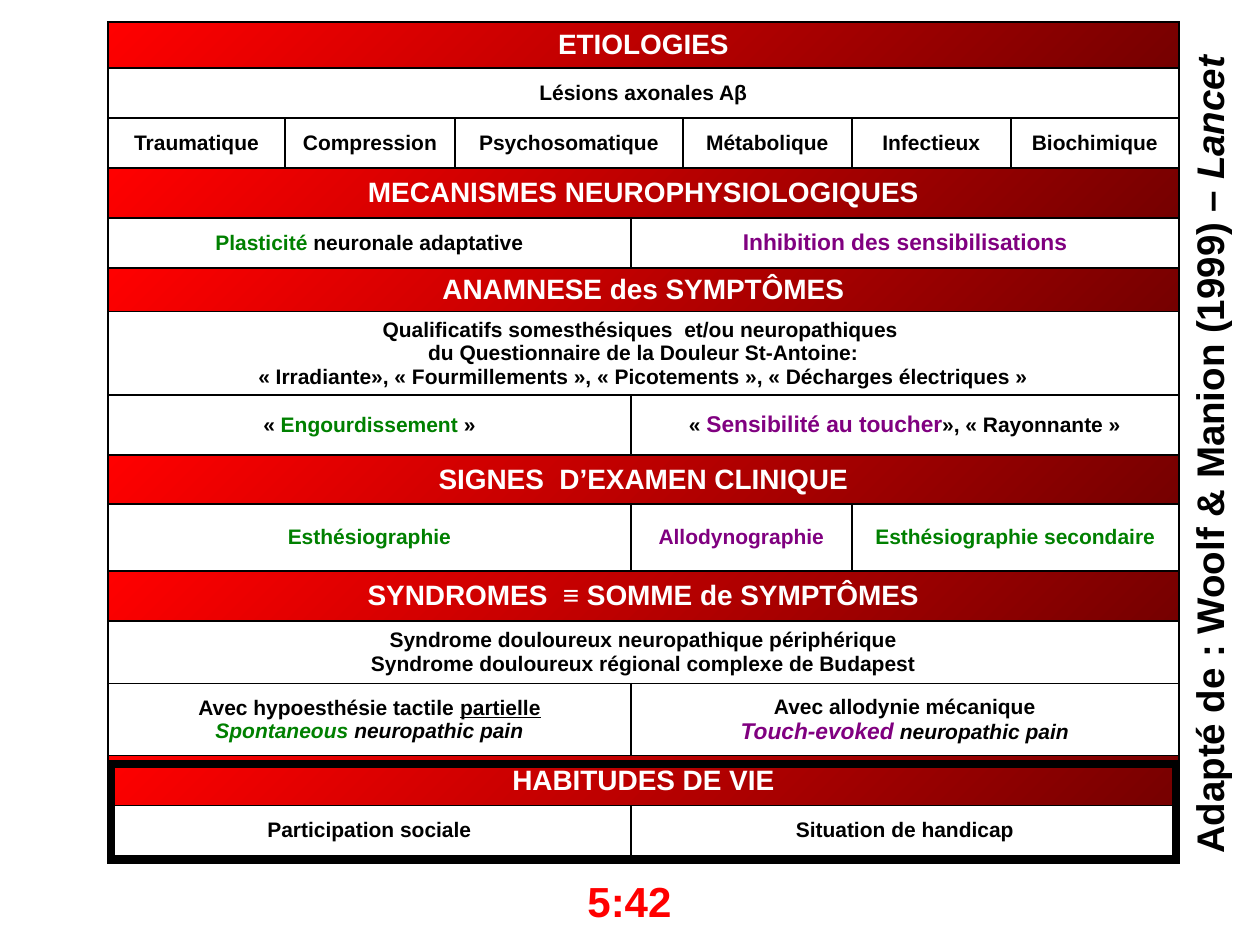
from lxml.etree import SubElement
from pptx import Presentation
from pptx.dml.color import RGBColor
from pptx.enum.shapes import MSO_SHAPE as SHAPE
from pptx.enum.text import MSO_ANCHOR as ANCHOR, PP_ALIGN as ALIGN
from pptx.oxml import parse_xml
from pptx.oxml.ns import nsdecls, qn
from pptx.util import Pt

PX = 914400 // 126
BLACK = RGBColor(0, 0, 0)
WHITE = RGBColor(255, 255, 255)
RED = RGBColor(255, 0, 0)
DARK_RED = RGBColor(0x76, 0, 0)
GREEN = RGBColor(0, 0x80, 0)
PURPLE = RGBColor(0x80, 0, 0x80)


def write_lines(tf, lines):
    """Fill tf; a line is a list of runs (text, colour, size, style letters)."""
    for i, runs in enumerate(lines):
        p = tf.paragraphs[0] if i == 0 else tf.add_paragraph()
        p.alignment = ALIGN.CENTER
        for text, colour, size, style in runs:
            r = p.add_run()
            r.text = text
            r.font.name = "Arial"
            r.font.size = Pt(size)
            r.font.bold = True
            r.font.color.rgb = colour
            if "i" in style:
                r.font.italic = True
            if "u" in style:
                r.font.underline = True


def run(text, colour=BLACK, size=12, style=""):
    return text, colour, size, style


COLUMNS = [177, 170, 176, 52, 169, 159, 168]
# Each row: height, then cells as (columns spanned, lines); a string is a heading.
ROWS = [
    (46, "ETIOLOGIES"),
    (50, [(7, [[run("Lésions axonales Aβ")]])]),
    (50, [(1, [[run("Traumatique")]]),
          (1, [[run("Compression")]]),
          (2, [[run("Psychosomatique")]]),
          (1, [[run("Métabolique")]]),
          (1, [[run("Infectieux")]]),
          (1, [[run("Biochimique")]])]),
    (50, "MECANISMES NEUROPHYSIOLOGIQUES"),
    (50, [(3, [[run("Plasticité ", GREEN), run("neuronale adaptative")]]),
          (4, [[run("Inhibition des sensibilisations", PURPLE, 13)]])]),
    (44, "ANAMNESE des SYMPTÔMES"),
    (83, [(7, [[run("Qualificatifs somesthésiques  et/ou neuropathiques ")],
               [run("du Questionnaire de la Douleur St-Antoine:")],
               [run("« Irradiante», « Fourmillements », « Picotements », "
                    "« Décharges électriques »")]])]),
    (60, [(3, [[run("«"), run(" Engourdissement", GREEN), run(" »")]]),
          (4, [[run("« "), run("Sensibilité au toucher", PURPLE, 13),
                run("», « Rayonnante »")]])]),
    (49, "SIGNES  D’EXAMEN CLINIQUE"),
    (67, [(3, [[run("Esthésiographie", GREEN)]]),
          (2, [[run("Allodynographie", PURPLE)]]),
          (2, [[run("Esthésiographie secondaire", GREEN)]])]),
    (50, "SYNDROMES  ≡ SOMME de SYMPTÔMES"),
    (63, [(7, [[run("Syndrome douloureux neuropathique périphérique")],
               [run("Syndrome douloureux régional complexe de Budapest")]])]),
    (72, [(3, [[run("Avec hypoesthésie tactile "), run("partielle", style="u")],
               [run("Spontaneous ", GREEN, style="i"),
                run("neuropathic pain", style="i")]]),
          (4, [[run("Avec allodynie mécanique")],
               [run("Touch-evoked ", PURPLE, 13, "i"),
                run("neuropathic pain", style="i")]])]),
    (50, "HABITUDES DE VIE"),
    (50, [(3, [[run("Participation sociale")]]),
          (4, [[run("Situation de handicap")]])]),
]

prs = Presentation()
prs.slide_width, prs.slide_height = 1260 * PX, 945 * PX
slide = prs.slides.add_slide(prs.slide_layouts[6])

# Table
height = sum(row[0] for row in ROWS)
table = slide.shapes.add_table(len(ROWS), len(COLUMNS), 108 * PX, 22 * PX,
                               sum(COLUMNS) * PX, height * PX).table
table.first_row = False
table.horz_banding = False
for column, width in zip(table.columns, COLUMNS):
    column.width = width * PX

for i, (row_height, content) in enumerate(ROWS):
    table.rows[i].height = row_height * PX
    heading = isinstance(content, str)
    cells = [(7, [[run(content, WHITE, 16)]])] if heading else content
    left = 0
    for span, lines in cells:
        cell = table.cell(i, left)
        if span > 1:
            cell.merge(table.cell(i, left + span - 1))
        cell.vertical_anchor = ANCHOR.MIDDLE
        write_lines(cell.text_frame, lines)
        left += span

    for cell in table.rows[i].cells:
        if heading:
            cell.fill.gradient()
            cell.fill.gradient_angle = 315
            for stop, colour in zip(cell.fill.gradient_stops, (RED, DARK_RED)):
                stop.color.rgb = colour
        else:
            cell.fill.background()
        tcPr = cell._tc.get_or_add_tcPr()
        for n, side in enumerate("LRTB"):
            tcPr.insert(n, parse_xml(
                f'<a:ln{side} {nsdecls("a")} w="12700"><a:solidFill>'
                f'<a:srgbClr val="{BLACK}"/></a:solidFill></a:ln{side}>'))

# Frame around the last two rows
frame = slide.shapes.add_shape(SHAPE.RECTANGLE, 111 * PX, 764 * PX, 1065 * PX, 96 * PX)
frame.shadow.inherit = False
frame.fill.background()
frame.line.color.rgb = BLACK
frame.line.width = Pt(4.5)
SubElement(frame.line._get_or_add_ln(), qn("a:miter")).set("lim", "800000")

# Vertical source note
source = slide.shapes.add_textbox(751 * PX, 425 * PX, 917 * PX, 60 * PX)
source.rotation = 270
source.text_frame.word_wrap = True
write_lines(source.text_frame, [[run("Adapté de : Woolf & Manion (1999) – ", size=22),
                                 run("Lancet", size=22, style="i")]])

# Time
time = slide.shapes.add_textbox(530 * PX, 869 * PX, 199 * PX, 63 * PX)
time.text_frame.word_wrap = True
time.text_frame.vertical_anchor = ANCHOR.BOTTOM
write_lines(time.text_frame, [[run("5:42", RED, 24)]])

prs.save("out.pptx")
